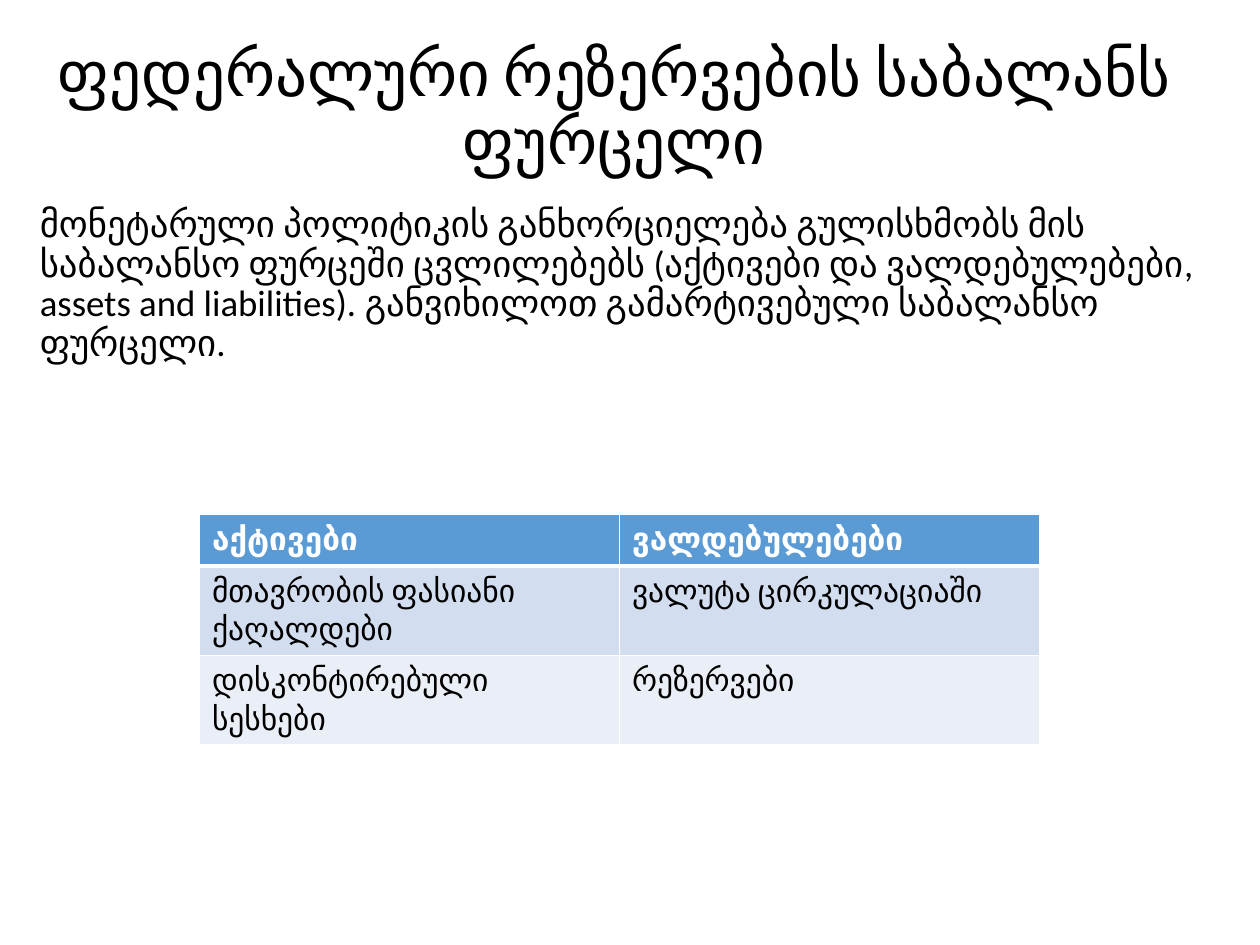
from lxml.etree import SubElement
from pptx import Presentation
from pptx.dml.color import RGBColor
from pptx.enum.text import MSO_ANCHOR as ANCHOR, MSO_AUTO_SIZE as AUTO, PP_ALIGN as ALIGN
from pptx.oxml.ns import qn
from pptx.util import Pt

PX = 914400 // 120
TITLE = "ფედერალური რეზერვების საბალანს ფურცელი"
BODY = (
    "მონეტარული პოლიტიკის განხორციელება გულისხმობს მის საბალანსო ფურცეში "
    "ცვლილებებს (აქტივები და ვალდებულებები, assets and liabilities). "
    "განვიხილოთ გამარტივებული საბალანსო ფურცელი."
)
BALANCE = [
    ("აქტივები", "ვალდებულებები"),
    ("მთავრობის ფასიანი ქაღალდები", "ვალუტა ცირკულაციაში"),
    ("დისკონტირებული სესხები", "რეზერვები"),
]
ROW_FILLS = ["5B9BD5", "D2DEEF", "EAEFF7"]


def px(n):
    return n * PX


def color(code):
    return RGBColor.from_string(code)


def write(tf, text, size=18, fill="000000", bold=False, align=ALIGN.LEFT, spacing=None, before=0):
    p = tf.paragraphs[0]
    p.alignment = align
    p.line_spacing = spacing
    p.space_before = Pt(before)
    r = p.add_run()
    r.text = text
    r.font.name = "Calibri"
    r.font.size = Pt(size)
    r.font.bold = bold
    r.font.color.rgb = color(fill)
    return p


def place(sp, left, top, width, height, anchor):
    sp.left, sp.top, sp.width, sp.height = map(px, (left, top, width, height))
    tf = sp.text_frame
    tf.word_wrap = True
    tf.auto_size = AUTO.NONE
    tf.vertical_anchor = anchor
    return tf


def remove_bullet(p, margin):
    pPr = p._p.get_or_add_pPr()
    pPr.set("marL", str(px(margin)))
    pPr.set("indent", "0")
    SubElement(pPr, qn("a:buNone"))


def add_borders(cell, **widths):
    tcPr = cell._tc.get_or_add_tcPr()
    for side in "LRTB":
        ln = SubElement(tcPr, qn(f"a:ln{side}"), w=str(Pt(widths.get(side, 1))))
        SubElement(SubElement(ln, qn("a:solidFill")), qn("a:srgbClr"), val="FFFFFF")


def add_balance_table(slide, left, top, width, row_height):
    rows, cols = len(BALANCE), len(BALANCE[0])
    size = px(width), px(row_height * rows)
    table = slide.shapes.add_table(rows, cols, px(left), px(top), *size).table
    for i, (texts, fill) in enumerate(zip(BALANCE, ROW_FILLS)):
        header = i == 0
        for j, text in enumerate(texts):
            cell = table.cell(i, j)
            add_borders(cell, T=3 if i == 1 else 1, B=3 if header else 1)
            cell.fill.solid()
            cell.fill.fore_color.rgb = color(fill)
            write(cell.text_frame, text, fill="FFFFFF" if header else "000000", bold=header)


def main():
    prs = Presentation()
    prs.slide_width, prs.slide_height = px(1200), px(900)
    slide = prs.slides.add_slide(prs.slide_layouts[1])
    title, body = slide.placeholders
    tf = place(title, 20, 30, 1130, 150, ANCHOR.MIDDLE)
    write(tf, TITLE, size=36, align=ALIGN.CENTER, spacing=0.9)
    tf = place(body, 20, 190, 1160, 680, ANCHOR.TOP)
    p = write(tf, BODY, size=21, spacing=0.9, before=7.5)
    remove_bullet(p, 6)
    add_balance_table(slide, 190, 490, 800, 49)
    prs.save("out.pptx")


if __name__ == "__main__":
    main()
